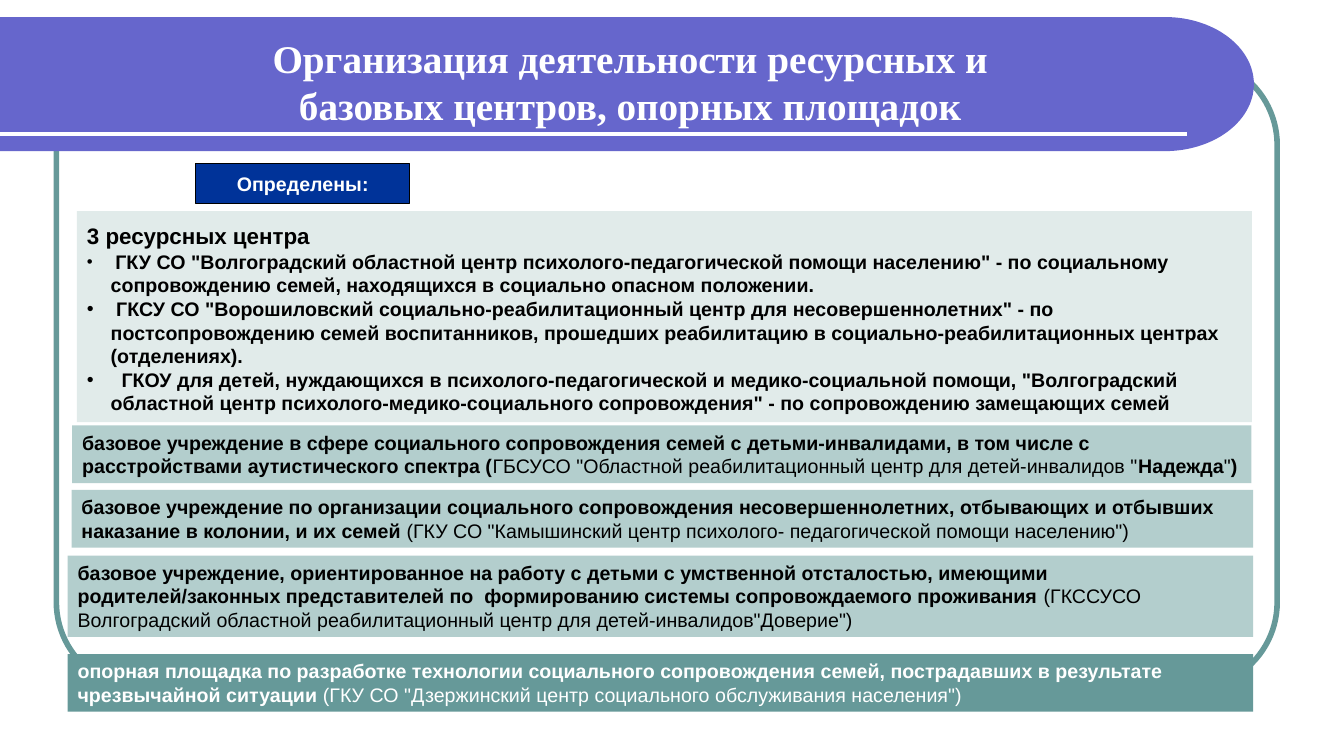
"""Build the slide on resource centres, base centres and support sites."""
from math import cos, pi, sin

from lxml import etree
from pptx import Presentation
from pptx.dml.color import RGBColor
from pptx.enum.shapes import MSO_CONNECTOR, MSO_SHAPE
from pptx.enum.text import MSO_ANCHOR, PP_ALIGN
from pptx.oxml.ns import qn
from pptx.util import Pt

RECTANGLE, ROUNDED = MSO_SHAPE.RECTANGLE, MSO_SHAPE.ROUNDED_RECTANGLE
STRAIGHT = MSO_CONNECTOR.STRAIGHT
TOP, MIDDLE = MSO_ANCHOR.TOP, MSO_ANCHOR.MIDDLE
LEFT, CENTER = PP_ALIGN.LEFT, PP_ALIGN.CENTER

COLOURS = {
    "band": "6666CC", "teal": "669999", "light": "B3CECD", "pale": "E1EBEA",
    "navy": "003399", "white": "FFFFFF", "black": "000000",
}
BODY = {"size": Pt(14), "bold": True, "name": "Arial"}
HEADING = {"size": Pt(28), "bold": True, "name": "Times New Roman"}
PLAIN = {"bold": False}

TITLE = "Организация деятельности ресурсных и базовых центров, опорных площадок"
LABEL = "Определены:"
CENTRES = [
    [("3 ресурсных центра", {"size": Pt(16)}), (" ", {"size": Pt(20)})],
    [(" ", {"size": Pt(12)}),
     ('ГКУ СО "Волгоградский областной центр психолого-педагогической помощи населению" - '
      'по социальному сопровождению семей, находящихся в социально опасном положении.', {})],
    [(' ГКСУ СО "Ворошиловский социально-реабилитационный центр для несовершеннолетних" - '
      'по постсопровождению семей воспитанников, прошедших реабилитацию в '
      'социально-реабилитационных центрах (отделениях).', {})],
    [('  ГКОУ для детей, нуждающихся в психолого-педагогической и медико-социальной помощи, '
      '"Волгоградский областной центр психолого-медико-социального сопровождения" - '
      'по сопровождению замещающих семей', {})],
]
PANELS = [
    ((51.6, 303.9, 842.4, 41.2), "light", "black", [
        ("базовое учреждение в сфере социального сопровождения семей с детьми-инвалидами, "
         "в том числе с расстройствами аутистического спектра (", {}),
        ('ГБСУСО "Областной реабилитационный центр для детей-инвалидов "', PLAIN),
        ("Надежда", {}), ('"', PLAIN), (")", {})]),
    ((51.1, 350, 844, 41.2), "light", "black", [
        ("базовое учреждение по организации социального сопровождения несовершеннолетних, "
         "отбывающих и отбывших наказание в колонии, и их семей ", {}),
        ('(ГКУ СО "Камышинский центр психолого- педагогической помощи населению")', PLAIN)]),
    ((48.4, 396.8, 846.7, 58.2), "light", "black", [
        ("базовое учреждение, ориентированное на работу с детьми с умственной отсталостью, "
         "имеющими родителей/законных представителей по  формированию системы "
         "сопровождаемого проживания ", {}),
        ('(ГКССУСО Волгоградский областной реабилитационный центр для '
         'детей-инвалидов"Доверие")', PLAIN)]),
    ((48.4, 467.2, 846.7, 41.2), "teal", "white", [
        ("опорная площадка по разработке технологии социального сопровождения семей, "
         "пострадавших в результате чрезвычайной ситуации ", {}),
        ('(ГКУ СО "Дзержинский центр социального обслуживания населения")', PLAIN)]),
]

FRAME_BOX = (40.3, 41.8, 872, 450)
TITLE_BOX = (133.9, 25.9, 632.2, 64.1)
LABEL_BOX = (139.9, 116.8, 152.8, 28.4)
CENTRES_BOX = (55, 150.9, 839.2, 150.6)
BAND_TOP, BAND_BOTTOM, BAND_STRAIGHT, BAND_TIP = 12.2, 108, 832, 895.7
RULE_Y, RULE_END = 95.9, 848.2
ARC_STEPS = 60
HANGING = Pt(17)


def colour(name):
    return RGBColor.from_string(COLOURS[name])


def paint(shape, fill=None, line=None, width=0.75):
    shape.shadow.inherit = False
    for part, name in ((shape.fill, fill), (shape.line.fill, line)):
        if name:
            part.solid()
            part.fore_color.rgb = colour(name)
        else:
            part.background()
    if line:
        shape.line.width = Pt(width)


def write(shape, paragraphs, ink, base=BODY, align=LEFT, anchor=TOP, wrap=True):
    frame = shape.text_frame
    frame.word_wrap = wrap
    frame.vertical_anchor = anchor
    for index, runs in enumerate(paragraphs):
        paragraph = frame.add_paragraph() if index else frame.paragraphs[0]
        paragraph.alignment = align
        for text, changes in runs:
            run = paragraph.add_run()
            run.text = text
            run.font.color.rgb = colour(ink)
            for key, value in {**base, **changes}.items():
                setattr(run.font, key, value)


def add_bullet(paragraph):
    properties = paragraph._p.get_or_add_pPr()
    properties.set("marL", str(HANGING))
    properties.set("indent", str(-HANGING))
    etree.SubElement(properties, qn("a:buFont")).set("typeface", "Arial")
    etree.SubElement(properties, qn("a:buChar")).set("char", "•")


def add_box(shapes, box, fill=None, line=None, width=0.75, kind=RECTANGLE):
    shape = shapes.add_shape(kind, *map(Pt, box))
    paint(shape, fill, line, width)
    return shape


def add_backdrop(shapes):
    frame = add_box(shapes, FRAME_BOX, line="teal", width=4, kind=ROUNDED)
    frame.adjustments[0] = 0.137
    radius_x = BAND_TIP - BAND_STRAIGHT
    radius_y = (BAND_BOTTOM - BAND_TOP) / 2
    angles = [pi * step / ARC_STEPS for step in range(ARC_STEPS + 1)]
    arc = [(Pt(BAND_STRAIGHT + radius_x * sin(angle)),
            Pt(BAND_TOP + radius_y * (1 - cos(angle)))) for angle in angles]
    builder = shapes.build_freeform(0, Pt(BAND_TOP))
    builder.add_line_segments(arc + [(0, Pt(BAND_BOTTOM))], close=True)
    paint(builder.convert_to_shape(), "band")
    rule = shapes.add_connector(STRAIGHT, 0, Pt(RULE_Y), Pt(RULE_END), Pt(RULE_Y))
    rule.line.color.rgb = colour("white")
    rule.line.width = Pt(3)
    etree.SubElement(rule._element.spPr, qn("a:effectLst"))


def main():
    presentation = Presentation()
    presentation.slide_width, presentation.slide_height = Pt(960), Pt(540)
    shapes = presentation.slides.add_slide(presentation.slide_layouts[6]).shapes
    add_backdrop(shapes)

    title = shapes.add_textbox(*map(Pt, TITLE_BOX))
    title.text_frame.margin_left = title.text_frame.margin_right = Pt(12)
    write(title, [[(TITLE, {})]], "white", HEADING, CENTER, MIDDLE)

    centres = add_box(shapes, CENTRES_BOX, "pale")
    write(centres, CENTRES, "black")
    for paragraph in centres.text_frame.paragraphs[1:]:
        add_bullet(paragraph)

    label = add_box(shapes, LABEL_BOX, "navy", "black")
    write(label, [[(LABEL, {})]], "white", align=CENTER, anchor=MIDDLE, wrap=False)

    for box, fill, ink, runs in PANELS:
        write(add_box(shapes, box, fill), [runs], ink)
    presentation.save("out.pptx")


if __name__ == "__main__":
    main()
